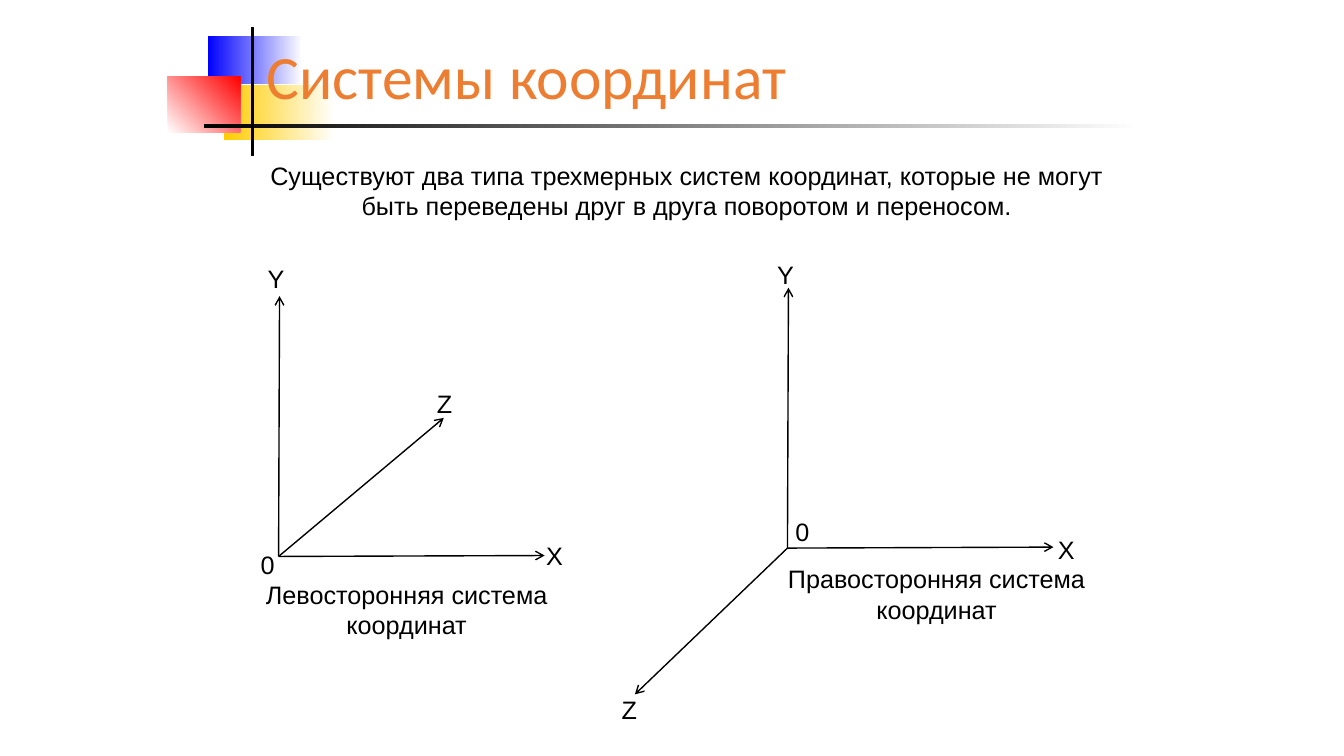
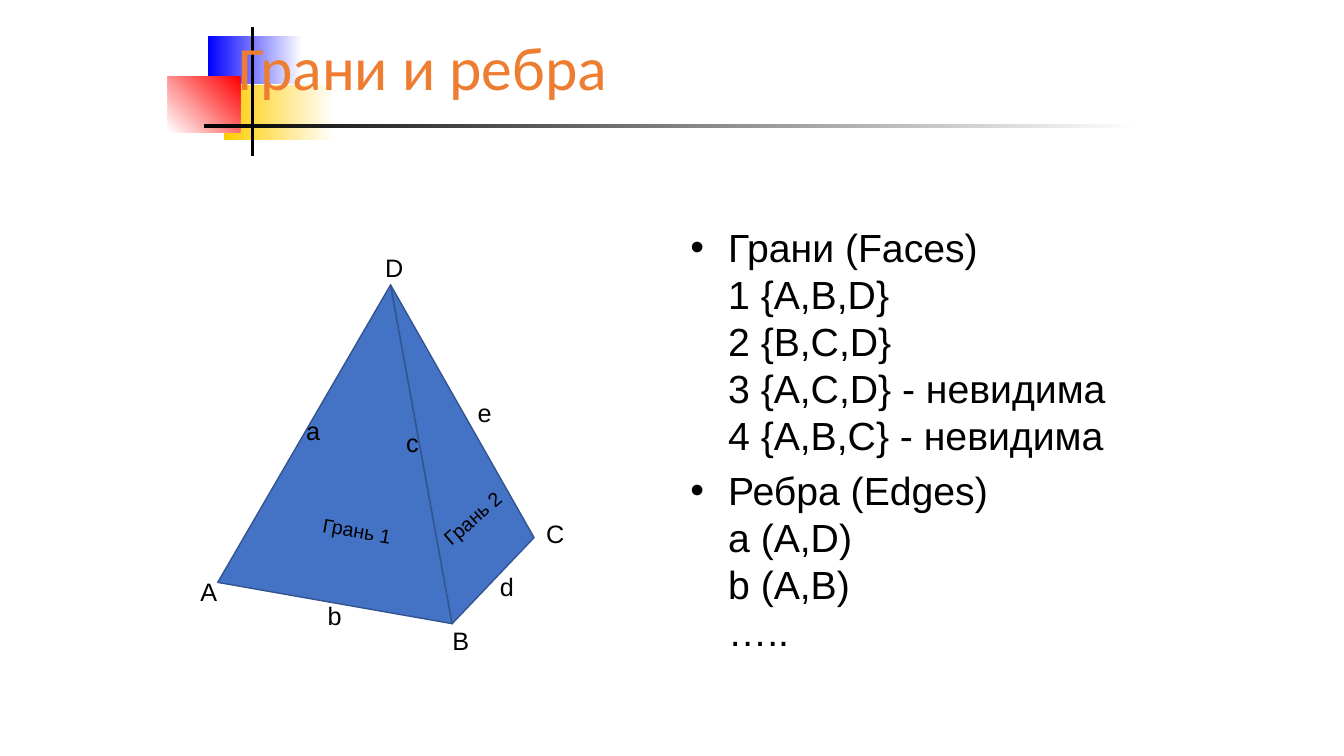
from pptx import Presentation
from pptx.dml.color import RGBColor
from pptx.enum import shapes, text
from pptx.oxml import ns, xmlchemy
from pptx.util import Pt

COLORS = {
    "title": "ED7D31",
    "ink": "000000",
    "paper": "FFFFFF",
    "blue": "0000FF",
    "yellow": "FFCC00",
    "red": "FF0000",
    "face": "4472C4",
    "edge": "325491",
}

ORNAMENTS = [
    ((148.5, 26, 67.5, 34), "blue", "paper", 0),
    ((160, 60.5, 79, 39.5), "yellow", "paper", 0),
    ((120, 54.5, 51.5, 40), "paper", "red", 45),
    ((145.5, 88.5, 669, 3), "ink", "paper", 0),
]


def rgb(name):
    return RGBColor.from_string(COLORS[name])


def add_child(parent, tag, **attributes):
    child = xmlchemy.OxmlElement(tag)
    for key, value in attributes.items():
        child.set(key, value)
    parent.append(child)
    return child


def add_text(slide, box, lines, size=18, font="Arial", color="ink", align="LEFT"):
    holder = slide.shapes.add_textbox(*map(Pt, box))
    frame = holder.text_frame
    frame.word_wrap = True
    for index, line in enumerate(lines):
        paragraph = frame.add_paragraph() if index else frame.paragraphs[0]
        paragraph.text = line
        paragraph.alignment = getattr(text.PP_ALIGN, align)
        paragraph.font.size = Pt(size)
        paragraph.font.name = font
        paragraph.font.color.rgb = rgb(color)
    return holder


def add_label(slide, left, top, letter):
    add_text(slide, (left, top, 29, 29), [letter])


def add_ornament(slide):
    for box, start, end, angle in ORNAMENTS:
        block = slide.shapes.add_shape(shapes.MSO_SHAPE.RECTANGLE, *map(Pt, box))
        block.shadow.inherit = False
        block.line.fill.background()
        block.fill.gradient()
        block.fill.gradient_angle = angle
        for stop, name in zip(block.fill.gradient_stops, (start, end)):
            stop.color.rgb = rgb(name)
    upright = slide.shapes.add_shape(
        shapes.MSO_SHAPE.RECTANGLE, Pt(179.5), Pt(20), Pt(1.5), Pt(91))
    upright.shadow.inherit = False
    upright.fill.solid()
    upright.fill.fore_color.rgb = rgb("ink")
    upright.line.color.rgb = rgb("ink")
    upright.line.width = Pt(0.75)


def add_titled_slide(deck, title, left, top):
    slide = deck.slides.add_slide(deck.slide_layouts[6])
    add_ornament(slide)
    heading = add_text(slide, (left, top, 648, 61), [title], 44, "Calibri", "title")
    heading.text_frame.vertical_anchor = text.MSO_ANCHOR.MIDDLE
    heading.text_frame.paragraphs[0].line_spacing = 0.9
    return slide


def add_axis(slide, x, y, dx, dy):
    axis = slide.shapes.add_connector(
        shapes.MSO_CONNECTOR.STRAIGHT, Pt(x), Pt(y), Pt(x + dx), Pt(y + dy))
    axis.line.color.rgb = rgb("ink")
    axis.line.width = Pt(1)
    properties = axis._element.spPr
    add_child(properties.find(ns.qn("a:ln")), "a:tailEnd", type="arrow")
    add_child(properties, "a:effectLst")


def add_axes(slide, x, y, z_tip, labels, caption, caption_offset):
    for dx, dy in ((0.7, -186), (190, -0.7), z_tip):
        add_axis(slide, x, y, dx, dy)
    for letter, (dx, dy) in labels.items():
        add_label(slide, x + dx, y + dy, letter)
    dx, dy = caption_offset
    add_text(slide, (x + dx, y + dy, 267, 51), caption, align="CENTER")


def add_pyramid(slide, left, top):
    a, b, c, d = (19.5, 239), (187, 268.5), (245.5, 207), (143, 26.5)
    for corners in ((d, b, a), (b, d, c)):
        points = [(Pt(left + x), Pt(top + y)) for x, y in corners]
        builder = slide.shapes.build_freeform(*points[0])
        builder.add_line_segments(points[1:], close=True)
        face = builder.convert_to_shape()
        face.shadow.inherit = False
        face.fill.solid()
        face.fill.fore_color.rgb = rgb("face")
        face.line.color.rgb = rgb("edge")
        face.line.width = Pt(1)
    labels = {
        "A": (0, 231), "B": (180, 266), "C": (247, 190), "D": (132, 0),
        "a": (75.5, 116), "e": (198, 103), "c": (147, 124.5),
        "b": (91, 248.5), "d": (214, 227.5),
    }
    for letter, (x, y) in labels.items():
        add_label(slide, left + x, top + y, letter)
    for name, x, y, angle in (("Грань 1", 75.5, 190, 10), ("Грань 2", 158, 181, 319)):
        caption = add_text(slide, (left + x, top + y, 87, 24.5), [name], 14, align="CENTER")
        caption.rotation = angle


def add_bullets(slide, box, items):
    bullets = add_text(slide, box, items, 28)
    for paragraph in bullets.text_frame.paragraphs:
        paragraph.space_before = Pt(5.6)
        properties = paragraph._p.get_or_add_pPr()
        properties.set("marL", str(Pt(27)))
        properties.set("indent", str(-Pt(27)))
        defaults = properties.find(ns.qn("a:defRPr"))
        for tag, attributes in (("a:buFont", {"typeface": "Arial"}), ("a:buChar", {"char": "•"})):
            defaults.addprevious(add_child(properties, tag, **attributes))


def build_coordinates(deck):
    slide = add_titled_slide(deck, "Системы координат", 183.5, 26.5)
    add_axes(
        slide, 199, 397.5, (118, -99),
        {"Y": (-15, -213), "X": (184, -15), "Z": (106, -124), "0": (-20, -9)},
        ["Левосторонняя система", "координат"], (-42, 12.5))
    add_axes(
        slide, 562.5, 391.5, (-109, 104.5),
        {"Y": (-14.5, -210), "X": (186, -13.5), "Z": (-125.5, 101), "0": (-1.5, -26.5)},
        ["Правосторонняя система", "координат"], (-27, 7.5))
    add_text(
        slide, (166.5, 111, 648, 51),
        ["Существуют два типа трехмерных систем координат, которые не могут "
         "быть переведены друг в друга поворотом и переносом."], align="CENTER")


def build_faces(deck):
    slide = add_titled_slide(deck, "Грани и ребра", 163, 20)
    add_bullets(slide, (486, 156, 320, 324), [
        "Грани (Faces)\n1 {A,B,D}\n2 {B,C,D}\n3 {A,C,D} - невидима\n4 {A,B,C} - невидима",
        "Ребра (Edges)\na (A,D)\nb (A,B)\n…..",
    ])
    add_pyramid(slide, 136, 177)


def main():
    deck = Presentation()
    deck.slide_width, deck.slide_height = Pt(960), Pt(540)
    build_coordinates(deck)
    build_faces(deck)
    deck.save("out.pptx")


if __name__ == "__main__":
    main()
